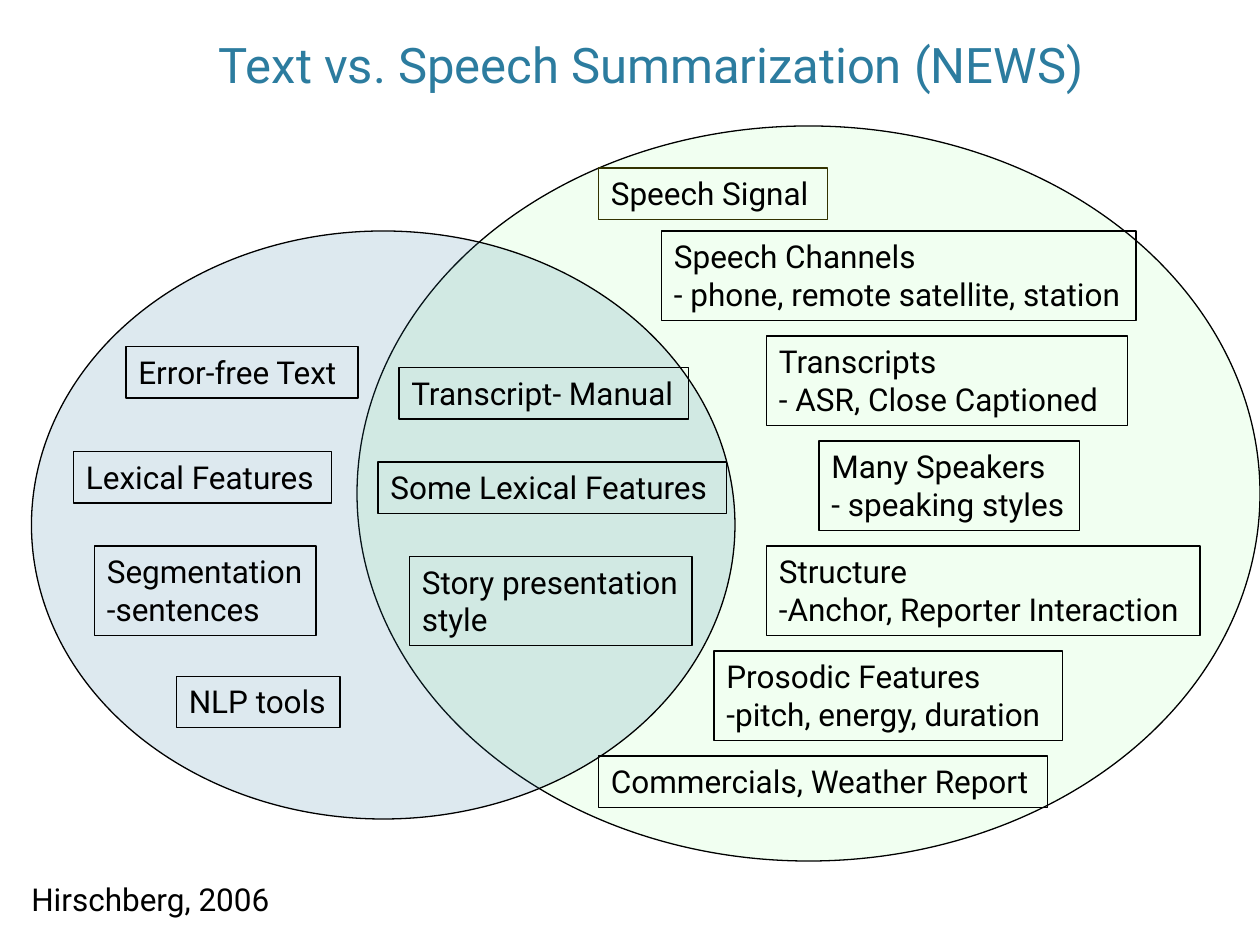
from lxml.etree import SubElement
from pptx import Presentation
from pptx.dml.color import RGBColor
from pptx.enum.shapes import MSO_SHAPE
from pptx.enum.text import MSO_ANCHOR, MSO_AUTO_SIZE, PP_ALIGN
from pptx.oxml.ns import qn
from pptx.util import Inches, Pt

TITLE = "Text vs. Speech Summarization (NEWS)"
SOURCE = "Hirschberg, 2006"
FONT, INK, TEAL, MINT, OLIVE = "Roboto", "000000", "2C7C9F", "CCFFCC", "333300"
COLS, ROWS = 120, 90
ONE_LINE, EXTRA_LINE = 4.9, 3.6

SPEECH_SET = (34, 12, 86, 70, MINT, 26)
TEXT_SET = (3, 22, 67, 56, TEAL, 16)

SPEECH_TOP, SPEECH_STEP = 22, 10
SPEECH = [
    (63, 45.2, "Speech Channels\n- phone, remote satellite, station"),
    (73, 34.4, "Transcripts\n- ASR, Close Captioned"),
    (78, 24.8, "Many Speakers\n- speaking styles"),
    (73, 41.3, "Structure\n-Anchor, Reporter Interaction"),
    (68, 33.2, "Prosodic Features\n-pitch, energy, duration"),
    (57, 42.8, "Commercials, Weather Report"),
]
SHARED_TOP, SHARED_STEP = 35, 9
SHARED = [
    (38, 27.6, "Transcript- Manual"),
    (36, 33.2, "Some Lexical Features"),
    (39, 26.9, "Story presentation\nstyle"),
]
TEXT_ONLY = [
    (12, 33, 22.1, "Error-free Text"),
    (7, 43, 24.6, "Lexical Features"),
    (9, 52, 21.1, "Segmentation\n-sentences"),
    (16.8, 64.4, 15.6, "NLP tools"),
]

prs = Presentation()
prs.slide_width, prs.slide_height = Inches(10), Inches(7.5)


def rgb(value):
    """Turn a hex string into a colour."""
    return RGBColor.from_string(value)


def place(col, row, cols, rows):
    """Turn grid cells into left, top, width and height."""
    dx, dy = prs.slide_width / COLS, prs.slide_height / ROWS
    return [round(v) for v in (col * dx, row * dy, cols * dx, rows * dy)]


def write(tf, text, size=18, color=INK, align=PP_ALIGN.LEFT):
    """Write one paragraph per line of text."""
    for i, line in enumerate(text.split("\n")):
        p = tf.paragraphs[0] if i == 0 else tf.add_paragraph()
        p.alignment = align
        r = p.add_run()
        r.text = line
        r.font.size, r.font.name = Pt(size), FONT
        r.font.color.rgb = rgb(color)


def outline(sp, color=INK):
    """Give a shape a thin line."""
    sp.line.color.rgb = rgb(color)
    sp.line.width = Pt(0.75)


def add_set(s, col, row, cols, rows, color, opacity):
    """Draw one translucent ellipse of the Venn diagram."""
    sp = s.shapes.add_shape(MSO_SHAPE.OVAL, *place(col, row, cols, rows))
    sp.shadow.inherit = False
    sp.fill.solid()
    sp.fill.fore_color.rgb = rgb(color)
    clr = sp.fill._xPr.find(qn("a:solidFill"))[0]
    SubElement(clr, qn("a:alpha")).set("val", str(opacity * 1000))
    outline(sp)


def add_label(s, col, row, cols, text, line=INK):
    """Add a text box whose height follows its number of lines."""
    rows = ONE_LINE + EXTRA_LINE * text.count("\n")
    sp = s.shapes.add_textbox(*place(col, row, cols, rows))
    tf = sp.text_frame
    tf.word_wrap = False
    tf.auto_size = MSO_AUTO_SIZE.SHAPE_TO_FIT_TEXT
    write(tf, text)
    if line:
        outline(sp, line)


def main():
    """Build the slide."""
    s = prs.slides.add_slide(prs.slide_layouts[5])
    title = s.shapes.title
    title.left, title.top, title.width, title.height = place(8, 0.5, 108, 9)
    title.text_frame.vertical_anchor = MSO_ANCHOR.BOTTOM
    write(title.text_frame, TITLE, size=28, color=TEAL, align=PP_ALIGN.CENTER)

    for venn_set in (SPEECH_SET, TEXT_SET):
        add_set(s, *venn_set)

    add_label(s, 57, 16, 21.8, "Speech Signal", line=OLIVE)
    for top, step, labels in ((SPEECH_TOP, SPEECH_STEP, SPEECH),
                              (SHARED_TOP, SHARED_STEP, SHARED)):
        for i, (col, cols, text) in enumerate(labels):
            add_label(s, col, top + i * step, cols, text)
    for label in TEXT_ONLY:
        add_label(s, *label)
    add_label(s, 1.8, 83.2, 27.5, SOURCE, line=None)
    prs.save("out.pptx")


if __name__ == "__main__":
    main()
